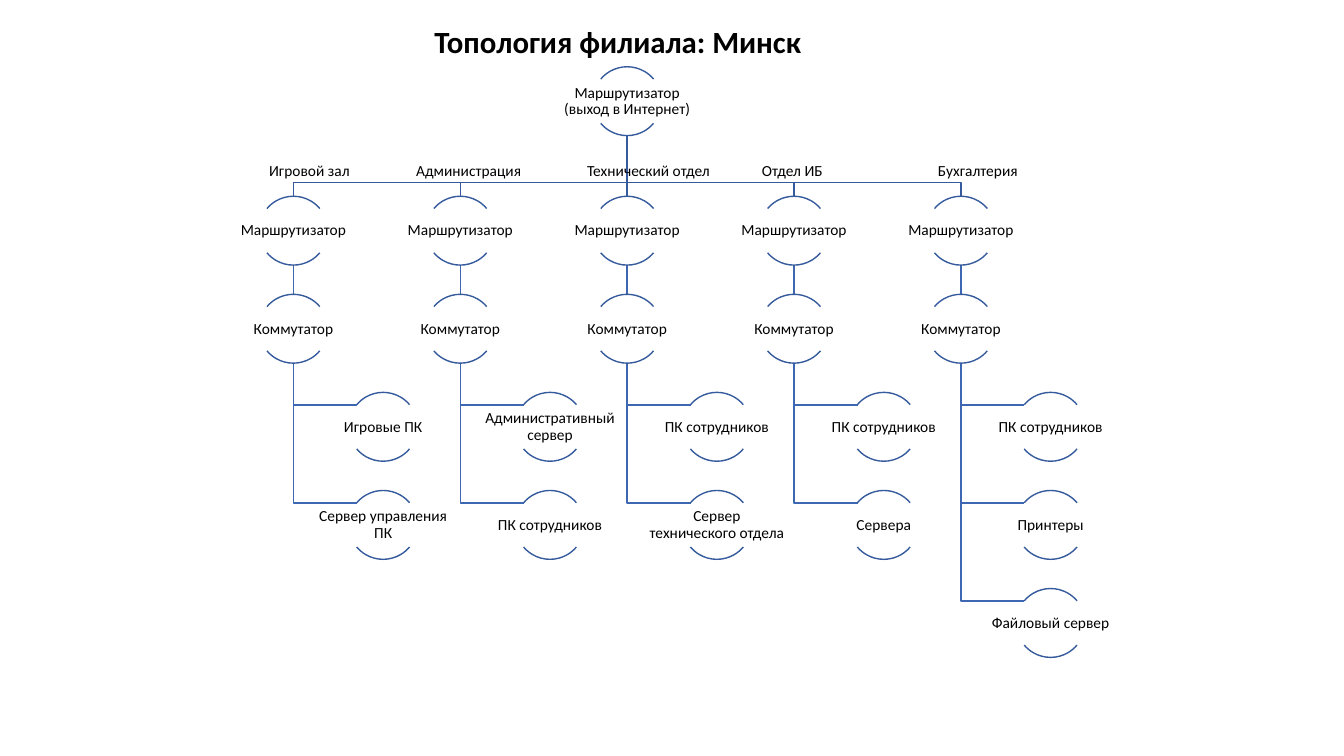
from dataclasses import dataclass

from lxml.etree import SubElement
from pptx import Presentation
from pptx.dml.color import RGBColor
from pptx.enum.shapes import MSO_CONNECTOR as Connector, MSO_SHAPE as Shape
from pptx.enum.text import MSO_ANCHOR as Anchor, PP_ALIGN as Align
from pptx.oxml.ns import qn
from pptx.util import Pt


@dataclass(frozen=True)
class Theme:
    font: str = "Calibri"
    text: RGBColor = RGBColor(0, 0, 0)
    outline: RGBColor = RGBColor(0x36, 0x5B, 0x9D)
    branch: RGBColor = RGBColor(0x3E, 0x67, 0xB2)
    title_size: int = 22
    body_size: int = 11
    line_width: int = 1


THEME = Theme()

COLUMN_START, COLUMN_STEP = 209.6, 119.2
ROW_START, ROW_STEP = 140.2, 70.05
DIAMETER = 49.2
ROOT_TOP = 47.7
BUS_Y = 130.3
LABEL_WIDTH, LABEL_HEIGHT, LABEL_DROP = 98.4, 31.5, 9
CHILD_OFFSET, STUB_LENGTH, STUB_DROP = 64.1, 45.4, 9
ARC_ANGLES = [(132, 192), (24, 84)]

DEPARTMENTS = {
    "Игровой зал": ["Игровые ПК", "Сервер управления ПК"],
    "Администрация": ["Административный сервер", "ПК сотрудников"],
    "Технический отдел": ["ПК сотрудников", "Сервер технического отдела"],
    "Отдел ИБ": ["ПК сотрудников", "Сервера"],
    "Бухгалтерия": ["ПК сотрудников", "Принтеры", "Файловый сервер"],
}
DEPARTMENT_TABS = [17.3, 122.4, 244.4, 369.3, 495.1]


def apply(target, formats):
    for name, value in formats.items():
        setattr(target, name, value)


def style_line(shape, color):
    shape.line.color.rgb = color
    shape.line.width = Pt(THEME.line_width)


def add_text(slide, box, text, size, bold=False, frame_formats=None, paragraph_formats=None):
    shape = slide.shapes.add_textbox(*map(Pt, box))
    frame = shape.text_frame
    apply(frame, {"word_wrap": True, **(frame_formats or {})})
    paragraph = frame.paragraphs[0]
    apply(paragraph, paragraph_formats or {})
    run = paragraph.add_run()
    run.text = text
    apply(run.font, {"name": THEME.font, "size": Pt(size), "bold": bold})
    run.font.color.rgb = THEME.text
    return paragraph


def add_link(slide, points, color):
    points = [(Pt(x), Pt(y)) for x, y in points]
    if len(points) == 2:
        link = slide.shapes.add_connector(Connector.STRAIGHT, *points[0], *points[1])
        style_line(link, color)
        SubElement(link._element.spPr, qn("a:effectLst"))
        return
    builder = slide.shapes.build_freeform(*points[0])
    builder.add_line_segments(points[1:], close=False)
    link = builder.convert_to_shape()
    link.fill.background()
    link.shadow.inherit = False
    style_line(link, color)


def add_node(slide, center, top, text):
    for angles in ARC_ANGLES:
        box = (center - DIAMETER / 2, top, DIAMETER, DIAMETER)
        arc = slide.shapes.add_shape(Shape.ARC, *map(Pt, box))
        for index, angle in enumerate(angles):
            arc.adjustments[index] = angle
        arc.fill.background()
        arc.shadow.inherit = False
        style_line(arc, THEME.outline)
    margins = {f"margin_{side}": Pt(0.7) for side in ("left", "top", "right", "bottom")}
    add_text(
        slide,
        (center - LABEL_WIDTH / 2, top + LABEL_DROP, LABEL_WIDTH, LABEL_HEIGHT),
        text,
        THEME.body_size,
        frame_formats={"vertical_anchor": Anchor.MIDDLE, **margins},
        paragraph_formats={"alignment": Align.CENTER, "line_spacing": 0.9},
    )


def column_center(column):
    return COLUMN_START + column * COLUMN_STEP


def row_top(row):
    return ROW_START + row * ROW_STEP


def add_department_links(slide, center, root_center, device_count):
    root_bottom = ROOT_TOP + DIAMETER
    bends = [] if center == root_center else [(root_center, BUS_Y), (center, BUS_Y)]
    add_link(slide, [(root_center, root_bottom), *bends, (center, row_top(0))], THEME.outline)
    add_link(slide, [(center, row_top(0) + DIAMETER), (center, row_top(1))], THEME.branch)
    for row in range(2, 2 + device_count):
        stub_y = row_top(row) + STUB_DROP
        points = [(center, row_top(1) + DIAMETER), (center, stub_y), (center + STUB_LENGTH, stub_y)]
        add_link(slide, points, THEME.branch)


def add_department_nodes(slide, center, devices):
    for row, text in enumerate(["Маршрутизатор", "Коммутатор"]):
        add_node(slide, center, row_top(row), text)
    for row, text in enumerate(devices, start=2):
        add_node(slide, center + CHILD_OFFSET, row_top(row), text)


def add_department_names(slide):
    text = "".join(f"\t{name}" for name in DEPARTMENTS)
    paragraph = add_text(slide, (167.8, 111.6, 603.4, 20.6), text, THEME.body_size)
    tabs = SubElement(paragraph._p.get_or_add_pPr(), qn("a:tabLst"))
    for position in DEPARTMENT_TABS:
        SubElement(tabs, qn("a:tab"), pos=str(Pt(position)), algn="l")


def main():
    presentation = Presentation()
    apply(presentation, {"slide_width": Pt(960), "slide_height": Pt(540)})
    slide = presentation.slides.add_slide(presentation.slide_layouts[6])

    add_text(slide, (303.1, 13, 317.5, 33.9), "Топология филиала: Минск", THEME.title_size, bold=True)
    root_center = column_center(len(DEPARTMENTS) // 2)
    for column, devices in enumerate(DEPARTMENTS.values()):
        add_department_links(slide, column_center(column), root_center, len(devices))
    add_node(slide, root_center, ROOT_TOP, "Маршрутизатор (выход в Интернет)")
    for column, devices in enumerate(DEPARTMENTS.values()):
        add_department_nodes(slide, column_center(column), devices)
    add_department_names(slide)

    presentation.save("out.pptx")


if __name__ == "__main__":
    main()
